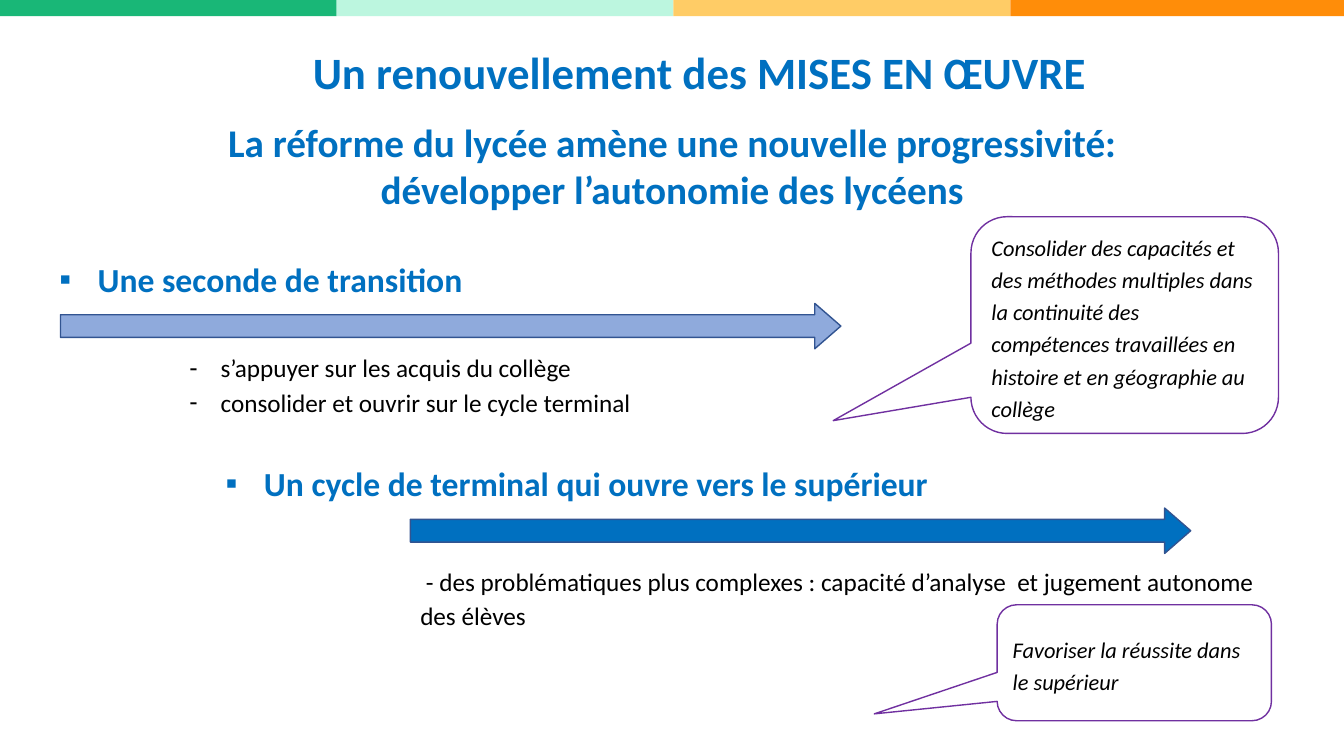
from lxml.etree import SubElement
from pptx import Presentation
from pptx.dml.color import RGBColor
from pptx.enum.shapes import MSO_SHAPE
from pptx.enum.text import MSO_ANCHOR, PP_ALIGN
from pptx.oxml.ns import qn
from pptx.util import Inches, Pt

WHITE = RGBColor(0xFF, 0xFF, 0xFF)
BLACK = RGBColor(0x00, 0x00, 0x00)
BLUE = RGBColor(0x00, 0x70, 0xC0)
PALE = RGBColor(0x8F, 0xAA, 0xDC)
NAVY = RGBColor(0x32, 0x54, 0x91)
PURPLE = RGBColor(0x70, 0x30, 0xA0)
BANDS = [RGBColor(0x19, 0xB7, 0x77), RGBColor(0xBC, 0xF6, 0xDF),
         RGBColor(0xFF, 0xCC, 0x66), RGBColor(0xFF, 0x8D, 0x09)]

WIDE, HIGH = 13.33, 7.5
STEP = 3.34


class Page:
    """Holds the text styles and the slide being drawn."""

    font = "Calibri"
    styles = {
        "title": {"size": Pt(32), "bold": True},
        "lead": {"size": Pt(28), "bold": True},
        "head": {"size": Pt(24), "bold": True},
        "body": {"size": Pt(18)},
        "note": {"size": Pt(16), "italic": True},
    }

    def __init__(self, slide):
        self.slide = slide

    def fill_text(self, frame, lines, style, color, form, mark=None, indent=0):
        for i, line in enumerate(lines):
            para = frame.paragraphs[0] if i == 0 else frame.add_paragraph()
            run = para.add_run()
            run.text = line
            run.font.name = self.font
            run.font.color.rgb = color
            for key, value in self.styles[style].items():
                setattr(run.font, key, value)
            for key, value in form.items():
                setattr(para, key, value)
            if mark:
                props = para._p.get_or_add_pPr()
                props.set("marL", str(Inches(indent)))
                props.set("indent", str(-Inches(indent)))
                SubElement(props, qn("a:buFont")).set("typeface", "Arial")
                SubElement(props, qn("a:buChar")).set("char", mark)

    def text(self, box, lines, style, color, form, wrap=True, **bullet):
        frame = self.slide.shapes.add_textbox(*map(Inches, box)).text_frame
        frame.word_wrap = wrap
        self.fill_text(frame, lines, style, color, form, **bullet)

    def shape(self, kind, box, fill, line=None, adjust=()):
        item = self.slide.shapes.add_shape(kind, *map(Inches, box))
        item.shadow.inherit = False
        item.fill.solid()
        item.fill.fore_color.rgb = fill
        if line is None:
            item.line.fill.background()
        else:
            item.line.color.rgb = line
            item.line.width = Pt(1)
        for i, value in enumerate(adjust):
            item.adjustments[i] = value
        return item

    def arrow(self, left, top, fill):
        self.shape(MSO_SHAPE.RIGHT_ARROW, (left, top, 7.74, 0.45),
                   fill, NAVY, (0.5, 0.574))

    def callout(self, box, words):
        item = self.shape(MSO_SHAPE.ROUNDED_RECTANGULAR_CALLOUT, box,
                          WHITE, PURPLE, (-0.948, 0.441, 0.167))
        frame = item.text_frame
        frame.word_wrap = True
        frame.vertical_anchor = MSO_ANCHOR.MIDDLE
        self.fill_text(frame, [words], "note", BLACK,
                       {"alignment": PP_ALIGN.LEFT, "line_spacing": 1.2})

    def bands(self):
        for i, color in enumerate(BANDS):
            left = i * STEP
            self.shape(MSO_SHAPE.RECTANGLE,
                       (left, 0, min(STEP, WIDE - left), 0.16), color)


def main():
    deck = Presentation()
    deck.slide_width, deck.slide_height = Inches(WIDE), Inches(HIGH)
    page = Page(deck.slides.add_slide(deck.slide_layouts[6]))
    center = {"alignment": PP_ALIGN.CENTER}
    loose = {"line_spacing": 1.15}

    page.bands()
    page.text((2.97, 0.39, 7.94, 0.64),
              ["Un renouvellement des MISES EN ŒUVRE"],
              "title", BLUE, center, wrap=False)
    page.text((0.2, 1.12, 12.93, 1.51),
              ["La réforme du lycée amène une nouvelle progressivité:",
               "développer l’autonomie des lycéens"], "lead", BLUE, center)

    page.text((0.49, 2.52, 7.09, 0.5), ["Une seconde de transition"],
              "head", BLUE, {}, mark="▪", indent=0.38)
    page.arrow(0.6, 3.01, PALE)
    page.text((1.78, 3.4, 6.67, 0.8),
              ["s’appuyer sur les acquis du collège",
               "consolider et ouvrir sur le cycle terminal"],
              "body", BLACK, loose, mark="-", indent=0.31)
    page.callout((9.63, 2.15, 3.05, 2.15),
                 "Consolider des capacités et des méthodes multiples dans "
                 "la continuité des compétences travaillées en histoire "
                 "et en géographie au collège")

    page.text((2.14, 4.54, 7.8, 0.5),
              ["Un cycle de terminal qui ouvre vers le supérieur"],
              "head", BLUE, {}, mark="▪", indent=0.38)
    page.arrow(4.07, 5.04, BLUE)
    page.text((4.07, 5.52, 8.54, 0.8),
              [" - des problématiques plus complexes : capacité d’analyse  "
               "et jugement autonome des élèves"], "body", BLACK, loose)
    page.callout((9.89, 6, 2.72, 1.15),
                 "Favoriser la réussite dans le supérieur")

    deck.save("out.pptx")


if __name__ == "__main__":
    main()
